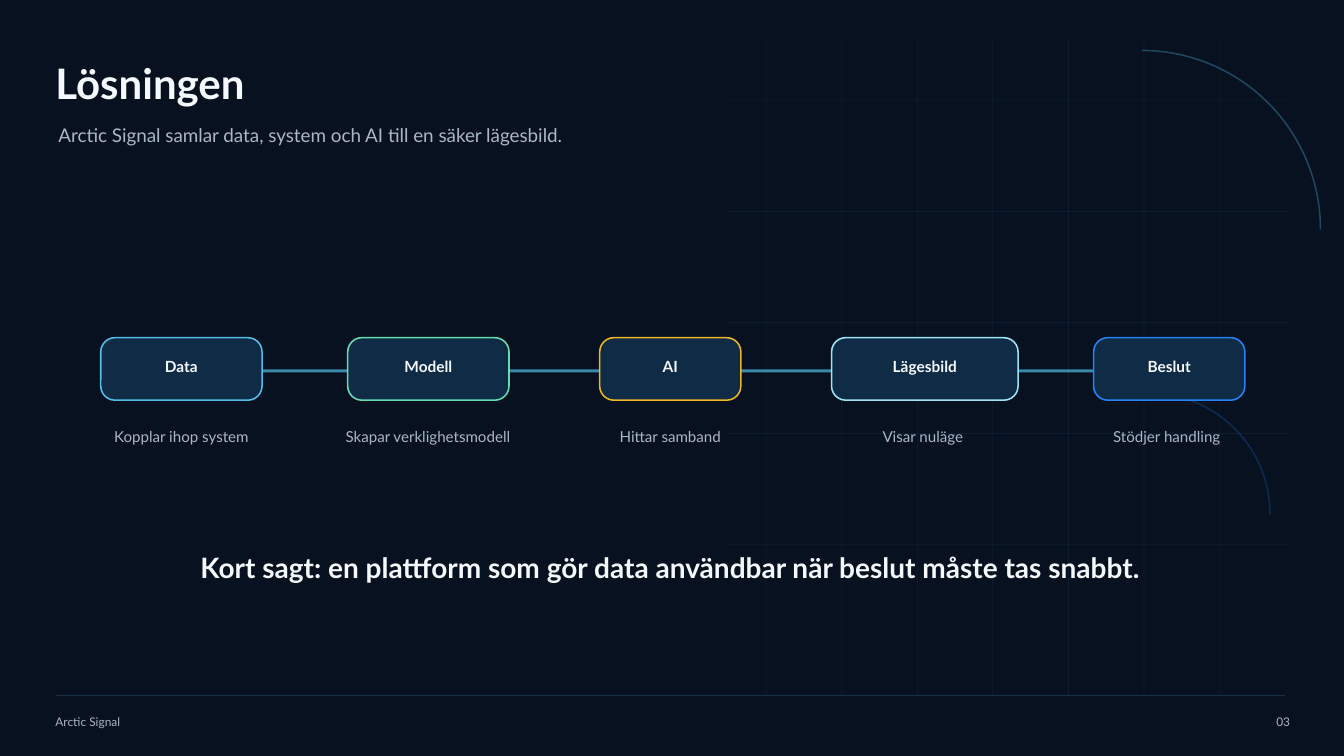
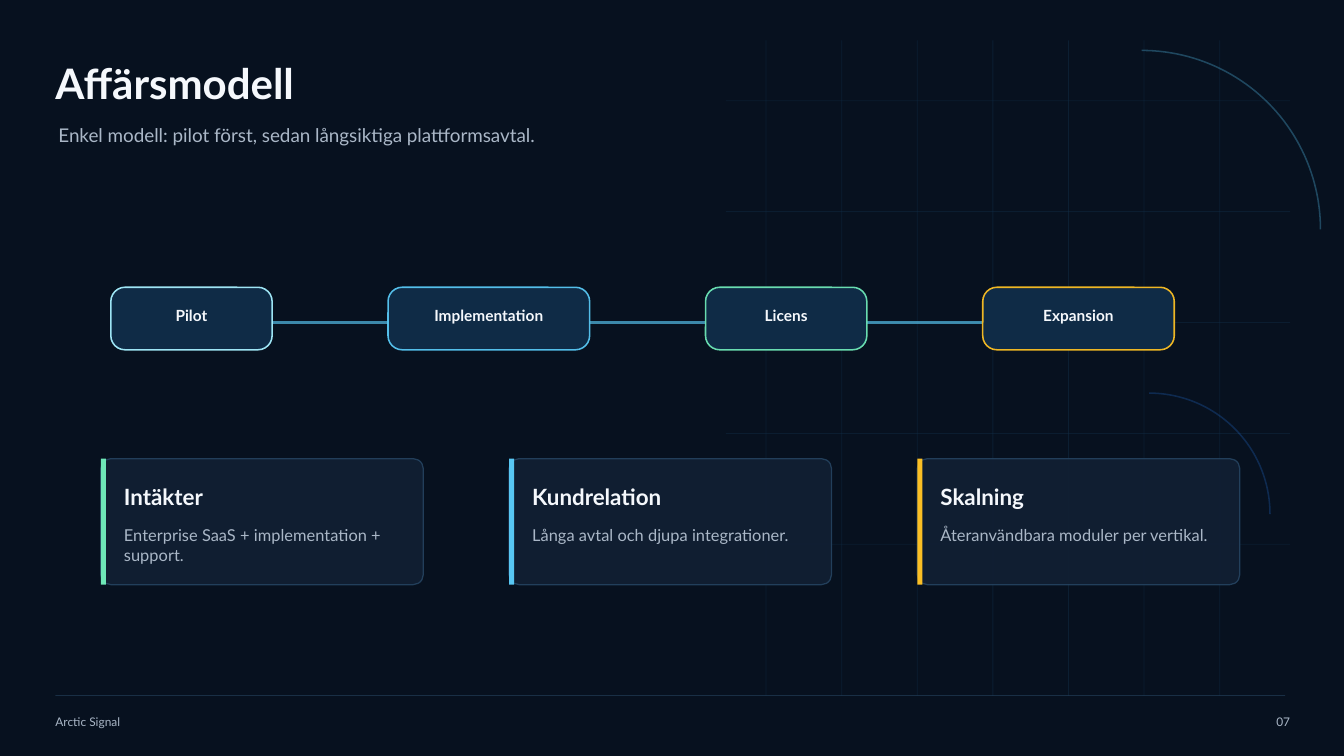
"""Build two dark slides that show process chains, captions and cards."""
from dataclasses import dataclass
from typing import Any, NamedTuple

from lxml.etree import SubElement
from pptx import Presentation
from pptx.dml.color import RGBColor
from pptx.enum.shapes import MSO_CONNECTOR, MSO_SHAPE
from pptx.enum.text import MSO_ANCHOR, MSO_AUTO_SIZE, PP_ALIGN
from pptx.oxml.ns import qn
from pptx.util import Pt

HUES = {
    "night": "07111F", "grid": "12304A", "edge": "284866",
    "node": "0F2B46", "card": "111F33", "white": "F5F8FC",
    "mute": "AAB7C7", "sky": "58C7F3", "blue": "2B87FF",
    "mint": "6EE7B7", "gold": "FBBF24", "ice": "A6F0FF",
}
FRAME = {
    "margin_left": 0, "margin_top": 0, "margin_right": 0, "margin_bottom": 0,
    "word_wrap": True, "auto_size": MSO_AUTO_SIZE.NONE,
    "vertical_anchor": MSO_ANCHOR.MIDDLE,
}
NODE_PAD = {
    "margin_left": Pt(5.04), "margin_right": Pt(5.04), "margin_bottom": Pt(4.32),
}
TOP = {"vertical_anchor": MSO_ANCHOR.TOP}
LEFT, MID, RIGHT = PP_ALIGN.LEFT, PP_ALIGN.CENTER, PP_ALIGN.RIGHT
BRAND = "Arctic Signal"


class Box(NamedTuple):
    left: float
    top: float
    wide: float
    high: float


class Style(NamedTuple):
    size: float
    hue: str
    bold: bool = False
    align: Any = LEFT


class Stroke(NamedTuple):
    hue: str
    wide: float
    alpha: int


@dataclass
class Node:
    text: str
    left: float
    wide: float
    hue: str


@dataclass
class Label:
    text: str
    left: float
    wide: float


@dataclass
class Card:
    head: str
    body: str
    hue: str


TITLE = Style(30, "white", True)
LEAD = Style(13.5, "mute")
STEP = Style(11, "white", True, MID)
NOTE = Style(10.8, "mute", False, MID)
CLOSE = Style(20, "white", True, MID)
HEAD = Style(16, "white", True)
BODY = Style(11.7, "mute")
FOOT = Style(8.5, "mute")
PAGE = FOOT._replace(align=RIGHT)

FLOW = [
    Node("Data", 72, 115.2, "sky"),
    Node("Modell", 248.4, 115.2, "mint"),
    Node("AI", 428.4, 100.8, "gold"),
    Node("Lägesbild", 594, 133.2, "ice"),
    Node("Beslut", 781.2, 108, "blue"),
]
NOTES = [
    Label("Kopplar ihop system", 61.2, 136.8),
    Label("Skapar verklighetsmodell", 224.64, 162),
    Label("Hittar samband", 406.8, 144),
    Label("Visar nuläge", 588.96, 140.4),
    Label("Stödjer handling", 759.6, 147.6),
]
SALES = [
    Node("Pilot", 79.2, 115.2, "ice"),
    Node("Implementation", 277.2, 144, "sky"),
    Node("Licens", 504, 115.2, "mint"),
    Node("Expansion", 702, 136.8, "gold"),
]
CARDS = [
    Card("Intäkter", "Enterprise SaaS + implementation + support.", "mint"),
    Card("Kundrelation", "Långa avtal och djupa integrationer.", "sky"),
    Card("Skalning", "Återanvändbara moduler per vertikal.", "gold"),
]


def paint(fill: Any, hue: str) -> None:
    """Give a fill one solid colour."""
    fill.solid()
    fill.fore_color.rgb = RGBColor.from_string(HUES[hue])


def fade(part: Any, alpha: int) -> None:
    """Set the opacity percentage of the colours in an XML part."""
    for tint in part.iter(qn("a:srgbClr")):
        SubElement(tint, qn("a:alpha"), val=str(alpha * 1000))


def trace(item: Any, stroke: Stroke) -> Any:
    """Style an outline and return its XML element."""
    paint(item.line.fill, stroke.hue)
    item.line.width = Pt(stroke.wide)
    edge = item.element.spPr.find(qn("a:ln"))
    fade(edge, stroke.alpha)
    return edge


def rule(slide: Any, x1: float, y1: float, x2: float, y2: float,
         stroke: Stroke, arrow: bool = False) -> None:
    """Draw a straight line, with an arrowhead if wanted."""
    line = slide.shapes.add_connector(
        MSO_CONNECTOR.STRAIGHT, Pt(x1), Pt(y1), Pt(x2), Pt(y2))
    edge = trace(line, stroke)
    if arrow:
        SubElement(edge, qn("a:tailEnd"), type="triangle")
    SubElement(line.element.spPr, qn("a:effectLst"))


def shape(slide: Any, kind: Any, box: Box, fill: str = "",
          stroke: Stroke | None = None, round_by: float | None = None) -> Any:
    """Draw a preset shape without a shadow."""
    item = slide.shapes.add_shape(kind, *map(Pt, box))
    item.shadow.inherit = False
    if round_by is not None:
        item.adjustments[0] = round_by
    if fill:
        paint(item.fill, fill)
    else:
        item.fill.background()
    if stroke:
        trace(item, stroke)
    else:
        item.line.fill.background()
    return item


def write(item: Any, text: str, style: Style, frame: dict | None = None) -> None:
    """Put styled text into a shape."""
    body = item.text_frame
    for key, value in {**FRAME, **(frame or {})}.items():
        setattr(body, key, value)
    para = body.paragraphs[0]
    para.text = text
    para.alignment = style.align
    font = para.runs[0].font
    looks = {"name": "Lato", "size": Pt(style.size), "bold": style.bold}
    for key, value in looks.items():
        setattr(font, key, value)
    paint(font.fill, style.hue)


def label(slide: Any, box: Box, text: str, style: Style,
          frame: dict | None = None) -> None:
    """Add a text box."""
    write(slide.shapes.add_textbox(*map(Pt, box)), text, style, frame)


def start(deck: Any, title: str, lead: str, page: str) -> Any:
    """Add a slide with backdrop, title, lead and footer."""
    slide = deck.slides.add_slide(deck.slide_layouts[5])
    for col in range(7):
        left = 547.2 + 54 * col
        rule(slide, left, 28.8, left, 496.8, Stroke("grid", 0.6, 45))
    for row in range(5):
        top = 72 + 79.2 * row
        rule(slide, 518.4, top, 921.6, top, Stroke("grid", 0.6, 40))
    shape(slide, MSO_SHAPE.ARC, Box(687.6, 36, 255.6, 255.6),
          stroke=Stroke("sky", 1.1, 30))
    shape(slide, MSO_SHAPE.ARC, Box(734.4, 280.8, 172.8, 172.8),
          stroke=Stroke("blue", 1.1, 22))
    head = slide.shapes.title
    place = {"left": 39.6, "top": 39.6, "width": 590.4, "height": 39.6}
    for key, value in place.items():
        setattr(head, key, Pt(value))
    write(head, title, TITLE)
    label(slide, Box(41.76, 83.52, 604.8, 25.2), lead, LEAD)
    label(slide, Box(39.6, 507.6, 165.6, 15.84), BRAND, FOOT)
    rule(slide, 39.6, 496.8, 918, 496.8, Stroke("edge", 0.5, 55))
    label(slide, Box(878.4, 507.6, 43.2, 15.84), page, PAGE)
    return slide


def chain(slide: Any, nodes: list[Node], top: float) -> None:
    """Draw the rounded steps of a chain."""
    for node in nodes:
        item = shape(slide, MSO_SHAPE.ROUNDED_RECTANGLE,
                     Box(node.left, top, node.wide, 44.64), "node",
                     Stroke(node.hue, 1.1, 95), 0.226)
        write(item, node.text, STEP, NODE_PAD)


def panel(slide: Any, card: Card, left: float, top: float) -> None:
    """Draw a card with a coloured bar, a heading and a text."""
    item = shape(slide, MSO_SHAPE.ROUNDED_RECTANGLE, Box(left, top, 230.4, 90),
                 "card", Stroke("edge", 0.9, 82), 0.08)
    fade(item.element.spPr.find(qn("a:solidFill")), 95)
    shape(slide, MSO_SHAPE.RECTANGLE, Box(left, top, 3.6, 90), card.hue)
    inner = left + 16.56
    label(slide, Box(inner, top + 15.84, 198, 23.04), card.head, HEAD)
    label(slide, Box(inner, top + 47.52, 198, 30.96), card.body, BODY, TOP)


def main() -> None:
    """Build and save the deck."""
    deck = Presentation()
    deck.slide_width, deck.slide_height = Pt(960), Pt(540)
    paint(deck.slide_master.background.fill, "night")

    slide = start(deck, "Lösningen",
                  "Arctic Signal samlar data, system och AI till en säker lägesbild.",
                  "03")
    rule(slide, 151.2, 264.96, 806.4, 264.96, Stroke("sky", 2.2, 65), True)
    chain(slide, FLOW, 241.2)
    for note in NOTES:
        label(slide, Box(note.left, 302.4, note.wide, 18), note.text, NOTE)
    label(slide, Box(97.2, 388.8, 763.2, 32.4),
          "Kort sagt: en plattform som gör data användbar när beslut måste tas snabbt.",
          CLOSE)

    slide = start(deck, "Affärsmodell",
                  "Enkel modell: pilot först, sedan långsiktiga plattformsavtal.",
                  "07")
    rule(slide, 144, 230.4, 806.4, 230.4, Stroke("sky", 2, 65), True)
    chain(slide, SALES, 205.2)
    for col, card in enumerate(CARDS):
        panel(slide, card, 72 + 291.6 * col, 327.6)

    deck.save("out.pptx")


if __name__ == "__main__":
    main()
